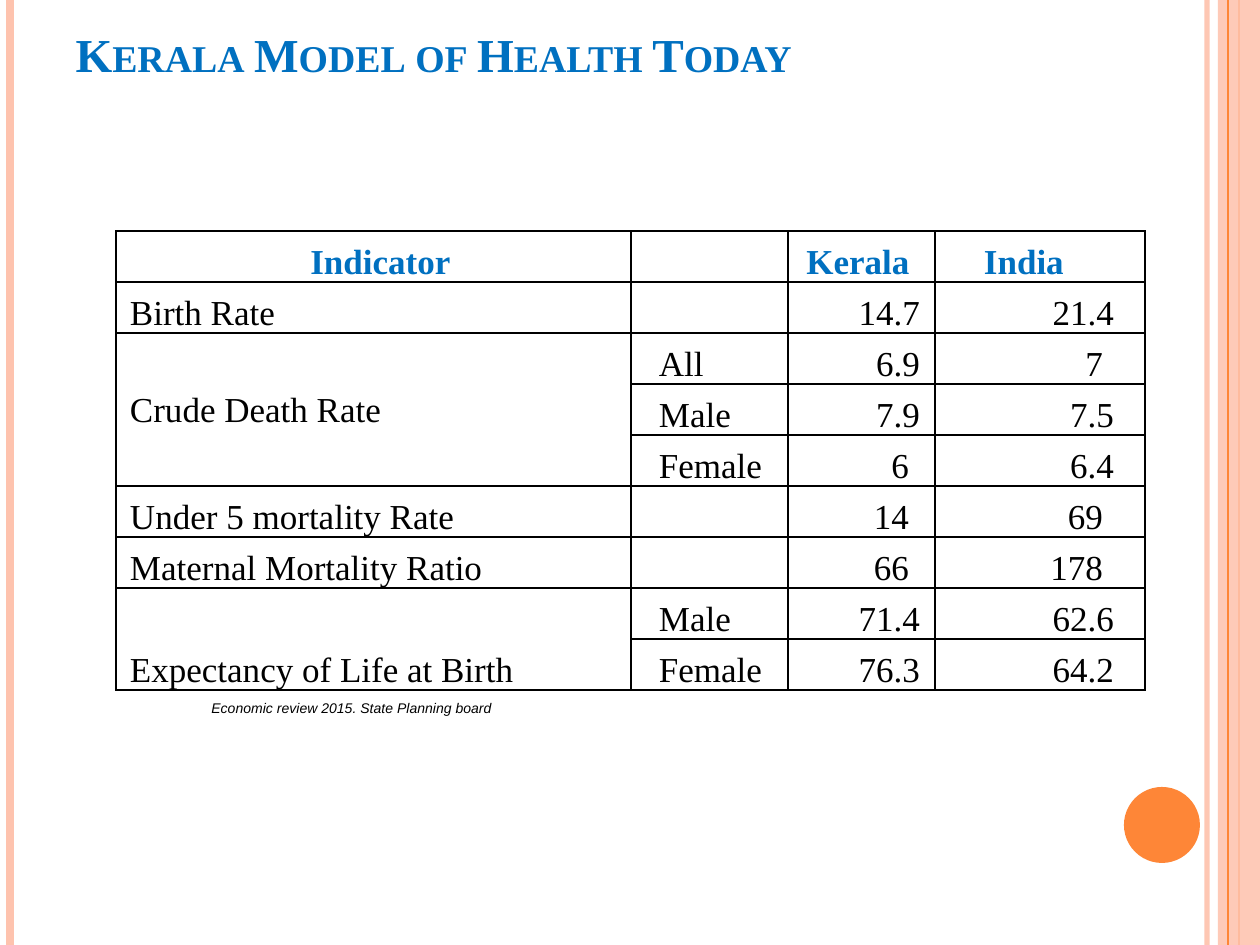
"""Build the slide comparing health indicators of Kerala and India."""
import pptx
import pptx.util
import pptx.dml.color
import pptx.enum.shapes
import pptx.enum.text
import pptx.oxml
import pptx.oxml.ns

PX = 914400 // 126
SERIF = "Times New Roman"
BLUE, BLACK, PEACH, ORANGE = "0070C0", "000000", "FEC3AE", "FE8637"
TITLE = "Kerala Model of Health Today"
SOURCE = "Economic review 2015. State Planning board"
ROWS = [
    ("Indicator", "", "Kerala", "India"),
    ("Birth Rate", "", "14.7", "21.4"),
    ("Crude Death Rate", "All", "6.9", "7"),
    ("", "Male", "7.9", "7.5"),
    ("", "Female", "6", "6.4"),
    ("Under 5 mortality Rate", "", "14", "69"),
    ("Maternal Mortality Ratio", "", "66", "178"),
    ("Expectancy of Life at Birth", "Male", "71.4", "62.6"),
    ("", "Female", "76.3", "64.2"),
]
MERGES = [(2, 4), (7, 8)]
COLUMN_WIDTHS = [515, 157, 147, 210]
ROW_HEIGHT = 51
LEFT_INSETS = [14, 28, 0, 0]
HEADER_RIGHT_INSETS = [0, 0, 7, 32]
RIGHT_INSETS = [0, 0, 15, 31]
WHOLE_NUMBER_INSET = 11
DEATH_RATE_LIFT = 56
LINES_BEHIND = [(1207, PEACH, 4.25, 93), (10, PEACH, 4.5, 100), (1239, ORANGE, 1.5, 100)]
LINES_BEHIND[0] = (1207, PEACH, 3, 93)
LINE_IN_FRONT = (1228, ORANGE, 0.75, 100)
NS = 'xmlns:a="http://schemas.openxmlformats.org/drawingml/2006/main"'
ALIGN = pptx.enum.text.PP_ALIGN
ANCHOR = pptx.enum.text.MSO_ANCHOR


def px(value):
    return pptx.util.Emu(value * PX)


def color(value):
    return pptx.dml.color.RGBColor.from_string(value)


def set_alpha(fill_parent, percent):
    for node in fill_parent.iter(pptx.oxml.ns.qn("a:srgbClr")):
        node.append(pptx.oxml.parse_xml(f'<a:alpha {NS} val="{percent * 1000}"/>'))


def format_text(paragraph, size, font, hex_color, bold=False, italic=False):
    for run in paragraph.runs:
        run.font.size = pptx.util.Pt(size)
        run.font.name = font
        run.font.color.rgb = color(hex_color)
        run.font.bold = bold
        run.font.italic = italic


def add_vertical_line(slide, x, hex_color, width, opacity):
    line = slide.shapes.add_connector(
        pptx.enum.shapes.MSO_CONNECTOR.STRAIGHT, px(x), 0, px(x), px(945))
    line.line.color.rgb = color(hex_color)
    line.line.width = pptx.util.Pt(width)
    properties = line._element.spPr
    if opacity < 100:
        set_alpha(properties, opacity)
    properties.append(pptx.oxml.parse_xml(f"<a:effectLst {NS}/>"))


def add_plain_shape(slide, kind, box, hex_color, opacity=100):
    shape = slide.shapes.add_shape(kind, *map(px, box))
    shape.shadow.inherit = False
    shape.fill.solid()
    shape.fill.fore_color.rgb = color(hex_color)
    shape.line.fill.background()
    if opacity < 100:
        set_alpha(shape._element.spPr, opacity)


def add_decoration(slide):
    shapes = pptx.enum.shapes.MSO_SHAPE
    for line in LINES_BEHIND:
        add_vertical_line(slide, *line)
    add_plain_shape(slide, shapes.RECTANGLE, (1218, 0, 42, 945), PEACH, 87)
    add_vertical_line(slide, *LINE_IN_FRONT)
    add_plain_shape(slide, shapes.OVAL, (1124, 787, 76, 76), ORANGE)


def add_title(slide):
    title = slide.shapes.title
    title.left, title.top, title.width, title.height = map(px, (63, 25, 1029, 170))
    frame = title.text_frame
    frame.text = TITLE
    frame.vertical_anchor = ANCHOR.TOP
    frame.margin_top = 0
    paragraph = frame.paragraphs[0]
    paragraph.alignment = ALIGN.LEFT
    format_text(paragraph, 27, SERIF, BLUE, bold=True)
    paragraph.runs[0].font._element.set("cap", "small")
    slide.shapes._spTree.append(title._element)


def format_cell(cell, row, column, text):
    header = row == 0
    cell.text = text
    cell.vertical_anchor = ANCHOR.BOTTOM
    cell.margin_top = 0
    cell.margin_bottom = px(DEATH_RATE_LIFT if text == "Crude Death Rate" else 0)
    cell.margin_left = px(LEFT_INSETS[column])
    right = (HEADER_RIGHT_INSETS if header else RIGHT_INSETS)[column]
    cell.margin_right = px(right + WHOLE_NUMBER_INSET * text.isdigit())
    paragraph = cell.text_frame.paragraphs[0]
    paragraph.line_spacing = pptx.util.Pt(10.9)
    if header:
        paragraph.alignment = ALIGN.CENTER
    else:
        paragraph.alignment = ALIGN.RIGHT if column > 1 else ALIGN.LEFT
    format_text(paragraph, 20, SERIF, BLUE if header else BLACK, bold=header)
    properties = cell._tc.get_or_add_tcPr()
    for side in ("lnL", "lnR", "lnT", "lnB"):
        properties.append(pptx.oxml.parse_xml(
            f'<a:{side} {NS} w="12700"><a:solidFill><a:srgbClr val="{BLACK}"/>'
            f"</a:solidFill></a:{side}>"))
    cell.fill.background()


def add_indicator_table(slide):
    table = slide.shapes.add_table(
        len(ROWS), len(COLUMN_WIDTHS), px(116), px(231),
        px(sum(COLUMN_WIDTHS)), px(ROW_HEIGHT * len(ROWS))).table
    table.horz_banding = False
    table.first_row = False
    for column, width in zip(table.columns, COLUMN_WIDTHS):
        column.width = px(width)
    for row in table.rows:
        row.height = px(ROW_HEIGHT)
    for row, texts in enumerate(ROWS):
        for column, text in enumerate(texts):
            format_cell(table.cell(row, column), row, column, text)
    for first, last in MERGES:
        table.cell(first, 0).merge(table.cell(last, 0))


def add_source(slide):
    frame = slide.shapes.add_textbox(*map(px, (199, 693, 630, 30))).text_frame
    frame.word_wrap = True
    frame.text = SOURCE
    format_text(frame.paragraphs[0], 8, "Arial", BLACK, italic=True)


def main():
    presentation = pptx.Presentation()
    presentation.slide_width, presentation.slide_height = px(1260), px(945)
    slide = presentation.slides.add_slide(presentation.slide_layouts[5])
    add_decoration(slide)
    add_title(slide)
    add_indicator_table(slide)
    add_source(slide)
    presentation.save("out.pptx")


if __name__ == "__main__":
    main()
